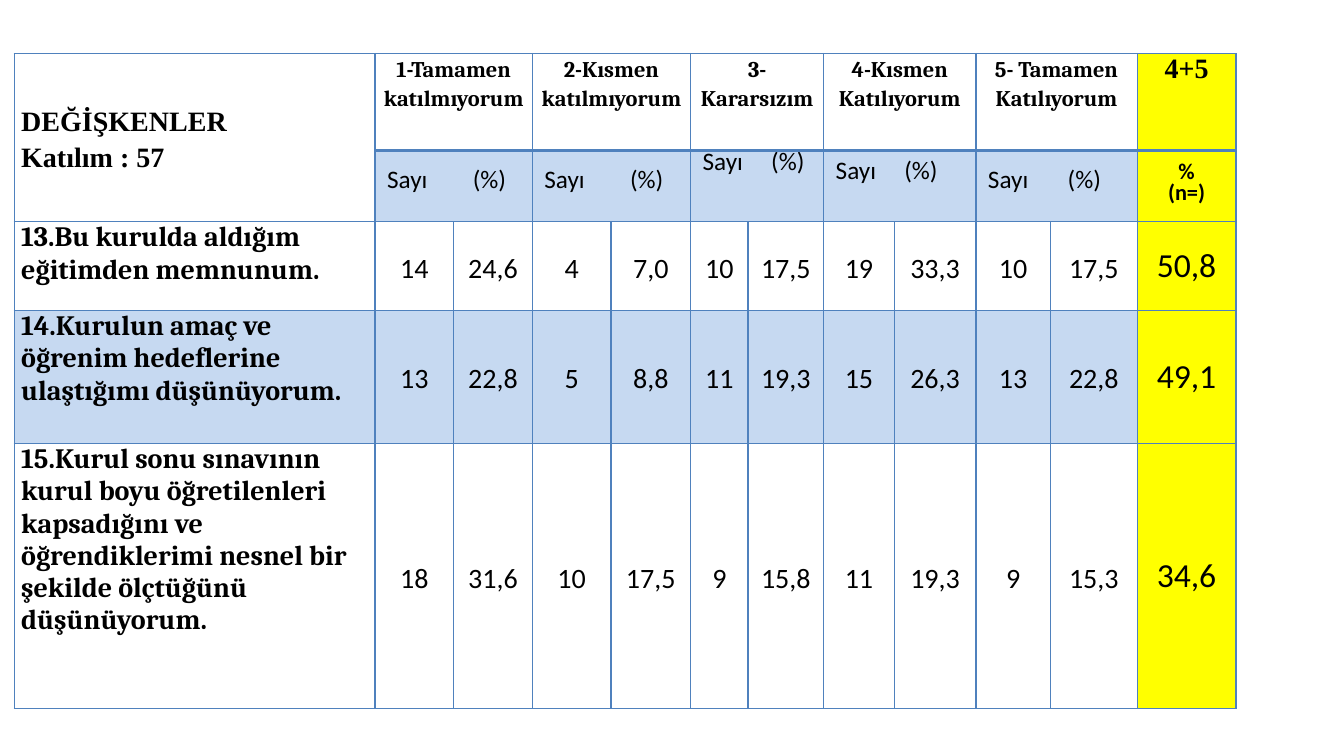
from dataclasses import dataclass

from lxml.etree import SubElement
from pptx import Presentation
from pptx.dml.color import RGBColor
from pptx.enum.text import MSO_ANCHOR as Anchor, PP_ALIGN as Align
from pptx.oxml.ns import qn
from pptx.util import Inches, Pt


@dataclass(frozen=True)
class Theme:
    """Colours, fonts and type sizes of the slide."""
    ink: str = "000000"
    rule: str = "4F81BD"
    band: str = "C6D9F1"
    total: str = "FFFF00"
    title_font: str = "Times New Roman"
    label_font: str = "Cambria"
    value_font: str = "Calibri"
    small: int = 16
    medium: int = 18
    body: int = 20
    large: int = 24
    thin: float = 1
    thick: float = 2.25


THEME = Theme()
COLUMN_WIDTHS = [3.58, 0.78, 0.78, 0.78, 0.79, 0.57, 0.75, 0.7, 0.81, 0.74, 0.86, 0.98]
ROW_HEIGHTS = [0.96, 0.7, 0.88, 1.32, 2.63]
TOTAL_COLUMN = len(COLUMN_WIDTHS) - 1
ANSWERS = [
    ("1-Tamamen katılmıyorum", 0.85, 0),
    ("2-Kısmen katılmıyorum", 0.85, 0),
    ("3-Kararsızım", 0.68, 0.36),
    ("4-Kısmen Katılıyorum", 0.68, 0.18),
    ("5- Tamamen Katılıyorum", 0.79, 0),
]
QUESTIONS = [
    ("13.Bu kurulda aldığım eğitimden memnunum.",
     ["14", "24,6", "4", "7,0", "10", "17,5", "19", "33,3", "10", "17,5"], "50,8"),
    ("14.Kurulun amaç ve öğrenim hedeflerine ulaştığımı düşünüyorum.",
     ["13", "22,8", "5", "8,8", "11", "19,3", "15", "26,3", "13", "22,8"], "49,1"),
    ("15.Kurul sonu sınavının kurul boyu öğretilenleri kapsadığını ve "
     "öğrendiklerimi nesnel bir şekilde ölçtüğünü düşünüyorum.",
     ["18", "31,6", "10", "17,5", "9", "15,8", "11", "19,3", "9", "15,3"], "34,6"),
]


def apply_format(target, values):
    """Set each named attribute of the target."""
    for name, value in values.items():
        setattr(target, name, value)


def draw_borders(cell, widths):
    """Rule the four sides of a cell with the given point widths."""
    properties = cell._tc.get_or_add_tcPr()
    for side, width in zip("LRTB", widths):
        line = SubElement(properties, qn(f"a:ln{side}"), w=str(Pt(width)))
        fill = SubElement(line, qn("a:solidFill"))
        SubElement(fill, qn("a:srgbClr"), val=THEME.rule)


def style_cell(cell, row, column):
    """Give a cell its borders, margins and fill by its place in the grid."""
    thick_top = row == 1 and column > 0
    thick_bottom = row == 0 and column > 0
    draw_borders(cell, [THEME.thin, THEME.thin,
                        THEME.thick if thick_top else THEME.thin,
                        THEME.thick if thick_bottom else THEME.thin])
    apply_format(cell, {"margin_left": Inches(0.07), "margin_right": Inches(0.07),
                        "margin_top": 0, "margin_bottom": 0})
    if column == TOTAL_COLUMN:
        color = THEME.total
    elif row == 3 or thick_top:
        color = THEME.band
    else:
        cell.fill.background()
        return
    cell.fill.solid()
    cell.fill.fore_color.rgb = RGBColor.from_string(color)


def write_cell(cell, text, font, size, bold=False, align=Align.LEFT,
               spacing=1.0, anchor=Anchor.MIDDLE, tab=None):
    """Write the lines of a cell in one type style."""
    cell.vertical_anchor = anchor
    frame = cell.text_frame
    for index, line in enumerate(text.split("\n")):
        paragraph = frame.add_paragraph() if index else frame.paragraphs[0]
        if tab:
            stops = SubElement(paragraph._p.get_or_add_pPr(), qn("a:tabLst"))
            SubElement(stops, qn("a:tab"), pos=str(Inches(tab)), algn="l")
        apply_format(paragraph, {"alignment": align, "line_spacing": spacing})
        run = paragraph.add_run()
        run.text = line
        apply_format(run.font, {"name": font, "size": Pt(size), "bold": bold})
        run.font.color.rgb = RGBColor.from_string(THEME.ink)


def fill_header(table):
    """Write the two header rows and merge their cells."""
    table.cell(0, 0).merge(table.cell(1, 0))
    write_cell(table.cell(0, 0), "DEĞİŞKENLER\nKatılım : 57", THEME.title_font,
               THEME.body, True, spacing=1.15)
    for index, (answer, tab, lift) in enumerate(ANSWERS):
        column = 1 + 2 * index
        for row in range(2):
            table.cell(row, column).merge(table.cell(row, column + 1))
        write_cell(table.cell(0, column), answer, THEME.label_font, THEME.small,
                   True, Align.CENTER, 1.15, Anchor.TOP)
        units = table.cell(1, column)
        apply_format(units, {"margin_left": Inches(0.12), "margin_bottom": Inches(lift)})
        write_cell(units, "Sayı\t(%)", THEME.value_font, THEME.medium,
                   spacing=Pt(13), tab=tab)
    write_cell(table.cell(0, TOTAL_COLUMN), "4+5", THEME.title_font, THEME.body,
               True, Align.CENTER, anchor=Anchor.TOP)
    write_cell(table.cell(1, TOTAL_COLUMN), "%\n(n=)", THEME.value_font, THEME.small,
               True, Align.CENTER, Pt(15))


def fill_questions(table):
    """Write one row for each question with its counts, shares and total."""
    for row, (question, values, total) in enumerate(QUESTIONS, 2):
        write_cell(table.cell(row, 0), question, THEME.label_font, THEME.body,
                   True, anchor=Anchor.TOP)
        for column, value in enumerate(values, 1):
            write_cell(table.cell(row, column), value, THEME.value_font, THEME.body,
                       align=Align.CENTER, spacing=1.15)
        total_cell = table.cell(row, TOTAL_COLUMN)
        apply_format(total_cell, {"margin_left": Inches(0.01), "margin_top": Inches(0.01),
                                  "margin_right": Inches(0.01)})
        write_cell(total_cell, total, THEME.value_font, THEME.large, align=Align.CENTER)


def add_survey_table(slide, left, top):
    """Place the survey table with its corner at the given point."""
    table = slide.shapes.add_table(
        len(ROW_HEIGHTS), len(COLUMN_WIDTHS), Inches(left), Inches(top),
        Inches(sum(COLUMN_WIDTHS)), Inches(sum(ROW_HEIGHTS))).table
    apply_format(table, {"first_row": False, "horz_banding": False})
    for column, width in zip(table.columns, COLUMN_WIDTHS):
        column.width = Inches(width)
    for row, height in zip(table.rows, ROW_HEIGHTS):
        row.height = Inches(height)
    for row in range(len(ROW_HEIGHTS)):
        for column in range(len(COLUMN_WIDTHS)):
            style_cell(table.cell(row, column), row, column)
    fill_header(table)
    fill_questions(table)


def main():
    """Build the survey slide and save it."""
    deck = Presentation()
    apply_format(deck, {"slide_width": Inches(13.33), "slide_height": Inches(7.5)})
    slide = deck.slides.add_slide(deck.slide_layouts[6])
    add_survey_table(slide, 0.14, 0.53)
    deck.save("out.pptx")


if __name__ == "__main__":
    main()
